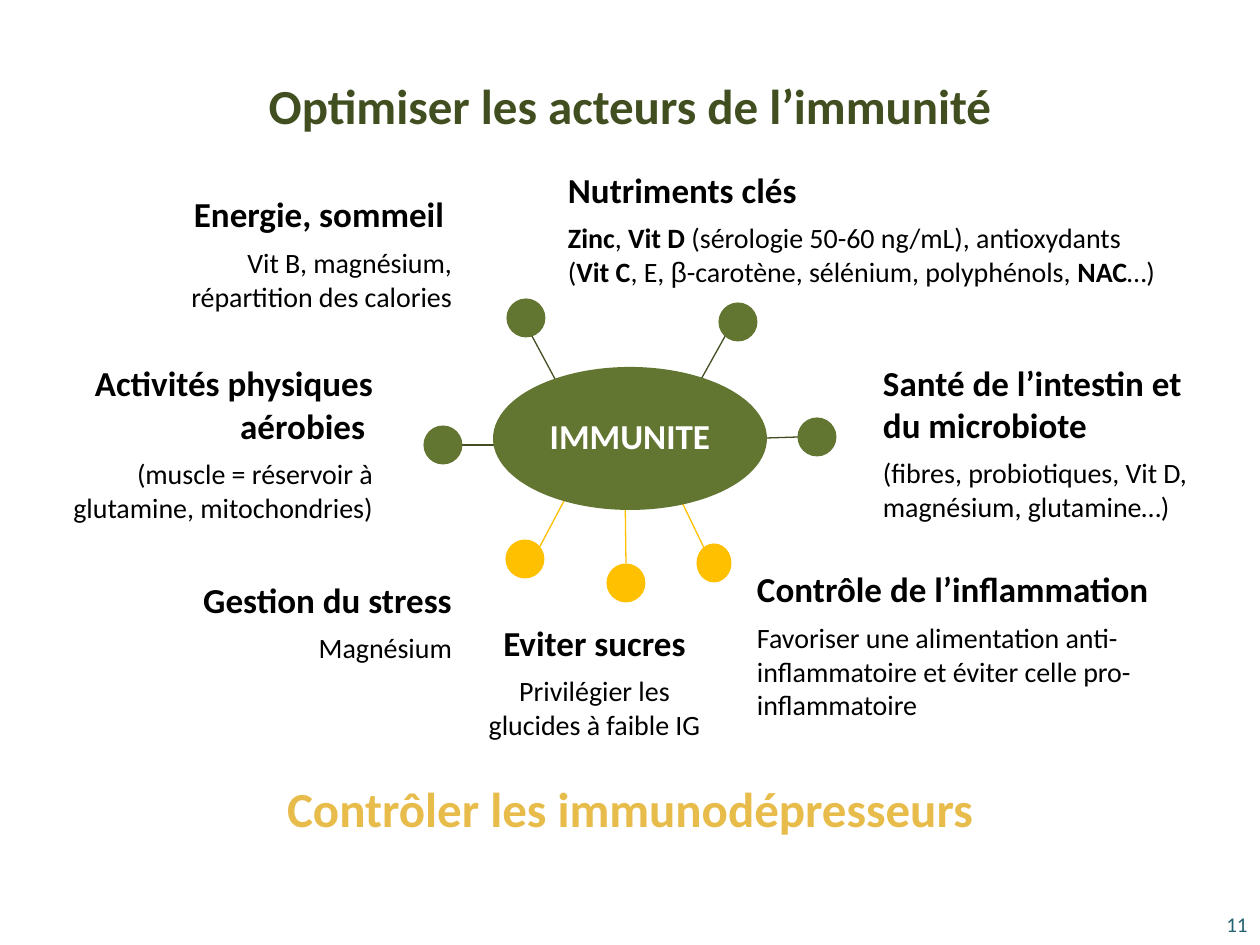
from lxml.etree import SubElement
from pptx import Presentation
from pptx.dml.color import RGBColor
from pptx.enum.shapes import MSO_CONNECTOR, MSO_SHAPE
from pptx.enum.text import PP_ALIGN
from pptx.oxml.ns import qn
from pptx.util import Emu, Pt

SCALE = 914400 / 126
GREEN, DARK_GREEN, YELLOW, GOLD = "627531", "414E20", "FFC000", "E8BC4A"
BLACK, WHITE, TEAL = "000000", "FFFFFF", "246372"
LEFT, CENTER, RIGHT = PP_ALIGN.LEFT, PP_ALIGN.CENTER, PP_ALIGN.RIGHT

# text, (left, top, width, height), size, colour
HEADLINES = [
    ("Optimiser les acteurs de l’immunité", (65, 76, 1130, 78), 28, DARK_GREEN),
    ("Contrôler les immunodépresseurs", (198, 779, 864, 78), 28, GOLD),
]
HUB_BOX = (493, 367, 274, 143)
HUB_LABEL = ("IMMUNITE", (509, 415, 242, 60), 20, WHITE)
PAGE_NUMBER, PAGE_NUMBER_BOX = "11", (1168, 905, 92, 38)

# heading, detail lines made of (text, bold, font) runs, box, alignment
REGULAR, BOLD = (False, "Calibri"), (True, "Calibri")
TOPICS = [
    ("Nutriments clés",
     [[("Zinc", *BOLD), (", ", *REGULAR), ("Vit D", *BOLD),
       (" (sérologie 50-60 ng/mL), antioxydants ", *REGULAR)],
      [("(", *REGULAR), ("Vit C", *BOLD), (", E, ", *REGULAR), ("β", False, "Arial"),
       ("-carotène, sélénium, polyphénols, ", *REGULAR), ("NAC", *BOLD),
       ("…)", *REGULAR)]],
     (568, 168, 595, 132), LEFT),
    ("Santé de l’intestin et du microbiote",
     [[("(fibres, probiotiques, Vit D, magnésium, glutamine…)", *REGULAR)]],
     (883, 361, 311, 121), LEFT),
    ("Contrôle de l’inflammation",
     [[("Favoriser une alimentation anti-inflammatoire et éviter celle "
        "pro-inflammatoire", *REGULAR)]],
     (757, 568, 447, 163), LEFT),
    ("Eviter sucres",
     [[("Privilégier les glucides à faible IG", *REGULAR)]],
     (485, 621, 219, 121), CENTER),
    ("Gestion du stress", [[("Magnésium", *REGULAR)]], (87, 578, 365, 121), RIGHT),
    ("Activités physiques aérobies ",
     [[("(muscle = réservoir à glutamine, mitochondries)", *REGULAR)]],
     (65, 362, 308, 145), RIGHT),
    ("Energie, sommeil ",
     [[("Vit B, magnésium, répartition des calories", *REGULAR)]],
     (131, 193, 321, 100), RIGHT),
]

# dot centre, dot width, line start, line end, dot colour, line colour
DOT = 39
SPOKES = [
    ((626, 583), DOT, (626, 563), (625, 486), YELLOW, YELLOW),
    ((714, 563), 35, (706, 552), (678, 494), YELLOW, YELLOW),
    ((525, 559), DOT, (537, 552), (573, 484), YELLOW, YELLOW),
    ((443, 445), DOT, (462, 445), (509, 445), GREEN, DARK_GREEN),
    ((817, 437), DOT, (798, 437), (767, 438), GREEN, DARK_GREEN),
    ((526, 318), DOT, (525, 323), (562, 392), GREEN, DARK_GREEN),
    ((738, 322), DOT, (728, 331), (694, 392), GREEN, DARK_GREEN),
]


def px(*lengths):
    return [Emu(round(length * SCALE)) for length in lengths]


def color(hex_code):
    return RGBColor.from_string(hex_code)


def add_box(slide, box, inset=0):
    frame = slide.shapes.add_textbox(*px(*box)).text_frame
    frame.word_wrap = True
    if inset == 0:
        frame.margin_left = frame.margin_right = 0
        frame.margin_top = frame.margin_bottom = 0
    return frame


def add_run(paragraph, text, size, hex_code, bold, font_name="Calibri"):
    run = paragraph.add_run()
    run.text = text
    run.font.size, run.font.bold, run.font.name = Pt(size), bold, font_name
    run.font.color.rgb = color(hex_code)


def add_headline(slide, text, box, size, hex_code):
    paragraph = add_box(slide, box).paragraphs[0]
    paragraph.alignment = CENTER
    add_run(paragraph, text, size, hex_code, True)


def add_topic(slide, heading, detail_lines, box, alignment):
    frame = add_box(slide, box)
    title, detail = frame.paragraphs[0], frame.add_paragraph()
    title.alignment = detail.alignment = alignment
    detail.space_before = Pt(6)
    add_run(title, heading, 20, BLACK, True)
    for index, line in enumerate(detail_lines):
        if index:
            detail.add_line_break()
        for text, bold, font_name in line:
            add_run(detail, text, 16, BLACK, bold, font_name)


def add_ellipse(slide, box, hex_code):
    ellipse = slide.shapes.add_shape(MSO_SHAPE.OVAL, *px(*box))
    ellipse.shadow.inherit = False
    ellipse.fill.solid()
    ellipse.fill.fore_color.rgb = color(hex_code)
    ellipse.line.fill.background()


def add_spoke(slide, center, width, start, end, dot_color, line_color):
    line = slide.shapes.add_connector(MSO_CONNECTOR.STRAIGHT, *px(*start, *end))
    line.line.color.rgb = color(line_color)
    line.line.width = Pt(0.75)
    SubElement(line._element.spPr, qn("a:effectLst"))
    x, y = center
    add_ellipse(slide, (x - width / 2, y - DOT / 2, width, DOT), dot_color)


def main():
    presentation = Presentation()
    presentation.slide_width, presentation.slide_height = px(1260, 945)
    slide = presentation.slides.add_slide(presentation.slide_layouts[6])
    for headline in HEADLINES:
        add_headline(slide, *headline)
    for topic in TOPICS:
        add_topic(slide, *topic)
    for spoke in SPOKES:
        add_spoke(slide, *spoke)
    add_ellipse(slide, HUB_BOX, GREEN)
    add_headline(slide, *HUB_LABEL)
    number = add_box(slide, PAGE_NUMBER_BOX, inset=None).paragraphs[0]
    number.alignment = RIGHT
    add_run(number, PAGE_NUMBER, 12, TEAL, False)
    presentation.save("out.pptx")


if __name__ == "__main__":
    main()
